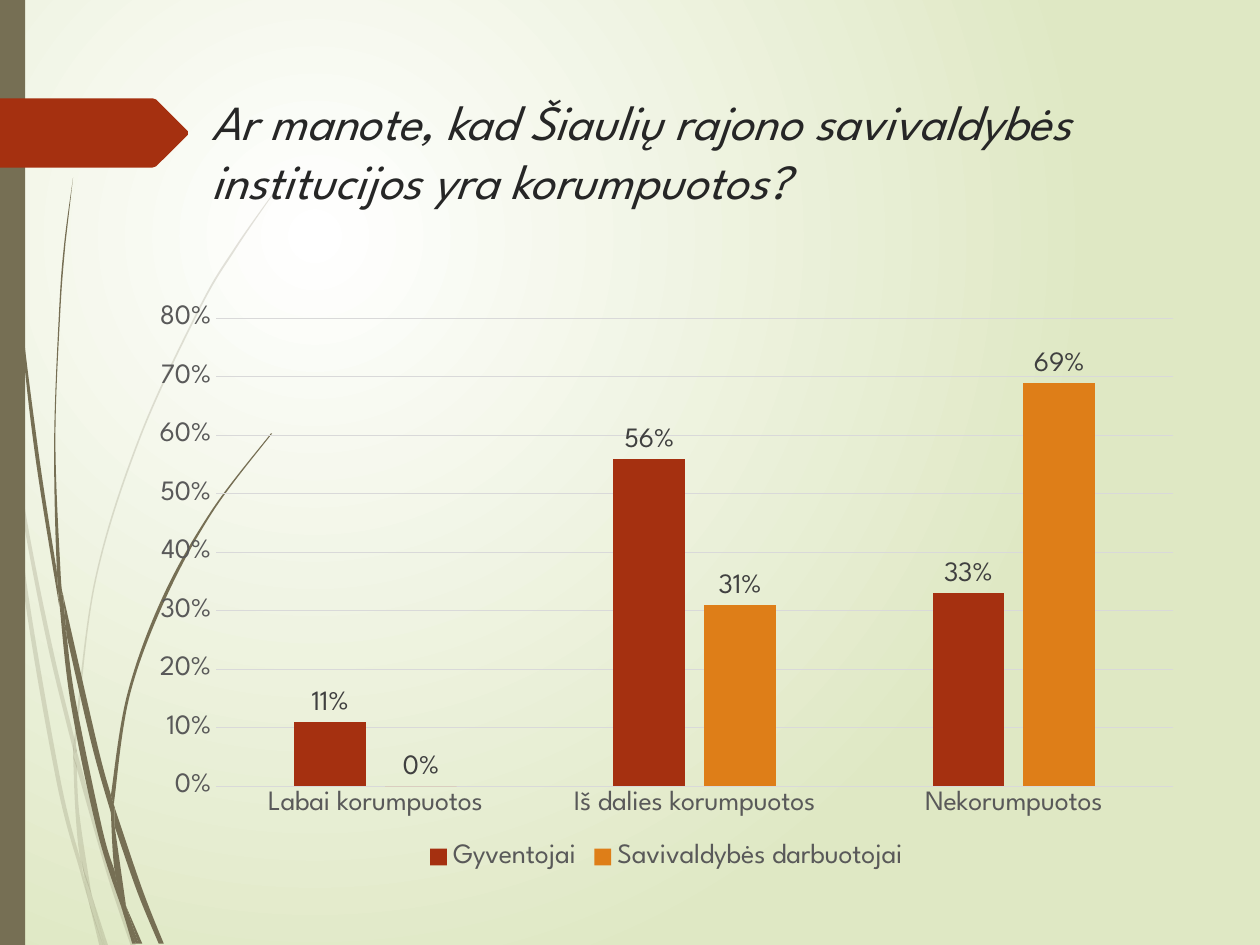
from lxml import etree
from pptx import Presentation
from pptx.chart.data import CategoryChartData
from pptx.dml.color import RGBColor
from pptx.enum import chart as charts, shapes, text
from pptx.oxml import parse_xml
from pptx.oxml.ns import nsdecls, qn
from pptx import util as u

THEME = {
    "font": "League Spartan", "title_size": 28, "chart_size": 16, "hairline": 0.75,
    "title": "262626", "axis": "595959", "label": "404040", "grid": "D9D9D9",
    "stem": "766F54", "tag": "A53010", "centre": "FFFFFF", "edge": "DFE8C4",
}

# Content
TITLE = "Ar manote, kad Šiaulių rajono savivaldybės institucijos yra korumpuotos?"
CATEGORIES = ["Labai korumpuotos", "Iš dalies korumpuotos", "Nekorumpuotos"]
SERIES = [
    ("Gyventojai", (0.11, 0.56, 0.33), "A53010"),
    ("Savivaldybės darbuotojai", (0, 0.31, 0.69), "DE7E18"),
]

# Grass blades: each has an outward and a returning edge, on a 10 by 7.5 grid
PALE_BLADES = [
    ([(0, 2.82), (0.06, 3.22), (0.08, 3.5)], [(0.07, 3.44), (0, 2.99)]),
    ([(0.1, 3.45), (0.25, 4.33), (0.43, 5.2), (0.59, 5.86)],
     [(0.59, 5.99), (0.4, 5.22), (0.25, 4.49), (0.12, 3.76)]),
    ([(0.61, 5.96), (0.64, 6.07), (0.88, 6.92), (1.08, 7.51)],
     [(1.04, 7.51), (0.85, 6.94), (0.61, 6.1)]),
    ([(0.73, 7.11), (0.86, 7.51)], [(0.83, 7.51)]),
    ([(0.08, 3.5), (0.19, 4.7), (0.45, 6.21), (0.64, 6.93), (0.7, 7.14)],
     [(0.64, 6.83), (0.48, 6.19), (0.22, 4.69), (0.12, 3.76)]),
    ([(0.58, 5.99), (0.6, 6.46), (0.64, 6.83), (0.73, 7.11)],
     [(0.72, 7.06), (0.63, 6.46), (0.61, 6.08)]),
    ([(0.59, 5.86), (0.75, 4.61), (1.1, 3.48), (1.58, 2.44), (1.86, 1.97), (2.17, 1.53)],
     [(2.17, 1.54), (1.87, 1.98), (1.59, 2.45), (1.11, 3.49), (0.76, 4.62), (0.61, 5.84),
      (0.61, 5.96)]),
    ([(0.7, 7.14), (0.79, 7.51)], [(0.82, 7.51)]),
    ([(0.59, 5.86), (0.58, 5.99), (0.61, 6.1)], [(0.61, 5.96)]),
    ([(0.65, 6.83), (0.7, 7.14), (0.82, 7.51)], [(0.83, 7.51), (0.73, 7.11), (0.67, 6.92)]),
]
DARK_BLADES = [
    ([(0.02, 0), (0.05, 1.1), (0.14, 2.33), (0.27, 3.55), (0.47, 4.81)],
     [(0.45, 4.53), (0.3, 3.55), (0.15, 2.32), (0.06, 1.09), (0.03, 0)]),
    ([(0.5, 4.72), (0.77, 5.9), (0.88, 6.31)], [(0.88, 6.45), (0.73, 5.92), (0.53, 5.05)]),
    ([(0.91, 6.41), (1.13, 7.06), (1.3, 7.49)], [(1.26, 7.49), (1.09, 7.08), (0.91, 6.56)]),
    ([(0.47, 4.77), (0.56, 5.57), (0.77, 6.59), (0.97, 7.22)],
     [(0.91, 6.91), (0.81, 6.57), (0.6, 5.56), (0.53, 5.05)]),
    ([(0.58, 1.41), (0.51, 1.93), (0.47, 2.45), (0.43, 3.49), (0.45, 4.49), (0.49, 4.72)],
     [(0.5, 4.72), (0.48, 4.53), (0.44, 3.49), (0.48, 2.45), (0.52, 1.93)]),
    ([(1, 7.19), (1.1, 7.49)], [(1.13, 7.49)]),
    ([(0.45, 4.49), (0.47, 4.77), (0.53, 5.05)], [(0.5, 4.72), (0.49, 4.72)]),
    ([(0.88, 6.31), (1.01, 5.51), (1.29, 4.74), (1.68, 4.05), (2.15, 3.44)],
     [(2.16, 3.44), (1.69, 4.06), (1.31, 4.76), (1.03, 5.52), (0.91, 6.33), (0.91, 6.41)]),
    ([(0.97, 7.22), (1.05, 7.49)], [(1.08, 7.49)]),
    ([(0.88, 6.45), (0.91, 6.91), (1, 7.19)], [(0.91, 6.56), (0.9, 6.51)]),
    ([(0.88, 6.31), (0.88, 6.45), (0.91, 6.56)], [(0.91, 6.41)]),
    ([(0.91, 6.91), (0.97, 7.22), (1.08, 7.49)], [(1.1, 7.49), (1, 7.19), (0.96, 7.06)]),
]
TAG = [(0, 0.78), (1.21, 0.78), (1.24, 0.79), (1.49, 1.04), (1.49, 1.07),
       (1.24, 1.32), (1.21, 1.33), (0, 1.33)]


def grid(value):
    return u.Cm(2.54 * value)


def colour(name):
    return RGBColor.from_string(THEME.get(name, name))


def controls(points):
    """List two control points and an end point for each span of a smooth edge."""
    padded = [points[0], *points, points[-1]]
    result = []
    for a, b, c, d in zip(padded, padded[1:], padded[2:], padded[3:]):
        result.append(tuple(q + (r - p) / 6 for p, q, r in zip(a, b, c)))
        result.append(tuple(r - (s - q) / 6 for q, r, s in zip(b, c, d)))
        result.append(c)
    return result


def paint(shape, name, alpha=None):
    shape.shadow.inherit = False
    shape.fill.solid()
    shape.fill.fore_color.rgb = colour(name)
    shape.line.fill.background()
    if alpha:
        tint = next(shape.element.spPr.iter(qn("a:srgbClr")))
        etree.SubElement(tint, qn("a:alpha")).set("val", str(alpha * 1000))


def outline(parent, points, name, alpha=None):
    places = [(grid(x), grid(y)) for x, y in points]
    builder = parent.build_freeform(*places[0])
    builder.add_line_segments(places[1:], close=True)
    shape = builder.convert_to_shape()
    paint(shape, name, alpha)
    return shape


def draw_blade(parent, outward, back, alpha):
    join = [outward[-1], back[0], back[0]]
    points = [outward[0], *controls(outward), *join, *controls(back)]
    shape = outline(parent, points, "stem", alpha)
    # Turn every three line segments into one curve
    lines = list(shape.element.spPr.iter(qn("a:lnTo")))
    for trio in zip(lines[::3], lines[1::3], lines[2::3]):
        curve = etree.Element(qn("a:cubicBezTo"))
        trio[0].addprevious(curve)
        for line in trio:
            curve.append(line[0])
            line.getparent().remove(line)


def style(font, size, name):
    font.name = THEME["font"]
    font.size = u.Pt(THEME[size])
    font.color.rgb = colour(name)


def draw_background(page):
    stops = "".join(f'<a:gs pos="{place}"><a:srgbClr val="{THEME[name]}"/></a:gs>'
                    for place, name in ((0, "centre"), (100000, "edge")))
    page.element.cSld.insert(0, parse_xml(
        f'<p:bg {nsdecls("p", "a")}><p:bgPr><a:gradFill rotWithShape="1"><a:gsLst>{stops}'
        '</a:gsLst><a:path path="circle"><a:fillToRect l="50000" t="50000" r="100000" '
        'b="100000"/></a:path></a:gradFill><a:effectLst/></p:bgPr></p:bg>'))


def draw_decoration(page):
    for blades, alpha in ((PALE_BLADES, 20), (DARK_BLADES, None)):
        group = page.shapes.add_group_shape()
        for outward, back in blades:
            draw_blade(group.shapes, outward, back, alpha)
    bar = page.shapes.add_shape(shapes.MSO_SHAPE.RECTANGLE, 0, 0, grid(0.2), grid(7.5))
    paint(bar, "stem")
    outline(page.shapes, TAG, "tag")


def draw_title(page):
    box = page.shapes.title
    box.element.getparent().append(box.element)  # in front of the blades
    box.left, box.top, box.width, box.height = map(grid, (1.58, 0.68, 8.34, 1.4))
    frame = box.text_frame
    frame.word_wrap = True
    frame.auto_size = text.MSO_AUTO_SIZE.NONE
    frame.vertical_anchor = text.MSO_ANCHOR.TOP
    para = frame.paragraphs[0]
    para.alignment = text.PP_ALIGN.LEFT
    span = para.add_run()
    span.text = TITLE
    style(span.font, "title_size", "title")
    span.font.italic = True


def draw_chart(page):
    data = CategoryChartData(number_format="0%")
    data.categories = CATEGORIES
    for name, values, _ in SERIES:
        data.add_series(name, values)
    chart = page.shapes.add_chart(charts.XL_CHART_TYPE.COLUMN_CLUSTERED,
                                  *map(grid, (1.1, 2.33, 8.38, 4.62)), data).chart
    style(chart.font, "chart_size", "axis")
    chart.has_title = False
    chart.has_legend = True
    chart.legend.position = charts.XL_LEGEND_POSITION.BOTTOM
    chart.legend.include_in_layout = False
    style(chart.legend.font, "chart_size", "axis")

    # Axes
    for axis in (chart.category_axis, chart.value_axis):
        axis.major_tick_mark = axis.minor_tick_mark = charts.XL_TICK_MARK.NONE
        style(axis.tick_labels.font, "chart_size", "axis")
    scale = chart.value_axis
    scale.tick_labels.number_format = "0%"
    scale.tick_labels.number_format_is_linked = False
    scale.format.line.fill.background()
    for line in (chart.category_axis.format.line, scale.major_gridlines.format.line):
        line.color.rgb = colour("grid")
        line.width = u.Pt(THEME["hairline"])

    # Columns and their labels
    plot = chart.plots[0]
    plot.gap_width, plot.overlap, plot.vary_by_categories = 219, -27, False
    for series, (_, _, fill) in zip(plot.series, SERIES):
        paint_fill = series.format.fill
        paint_fill.solid()
        paint_fill.fore_color.rgb = colour(fill)
        labels = series.data_labels
        labels.show_value = True
        labels.number_format, labels.number_format_is_linked = "0%", False
        labels.position = charts.XL_LABEL_POSITION.OUTSIDE_END
        style(labels.font, "chart_size", "label")


def main():
    deck = Presentation()
    deck.slide_width, deck.slide_height = grid(10), grid(7.5)
    page = deck.slides.add_slide(deck.slide_layouts[5])
    for draw in (draw_background, draw_decoration, draw_title, draw_chart):
        draw(page)
    deck.save("out.pptx")


if __name__ == "__main__":
    main()
